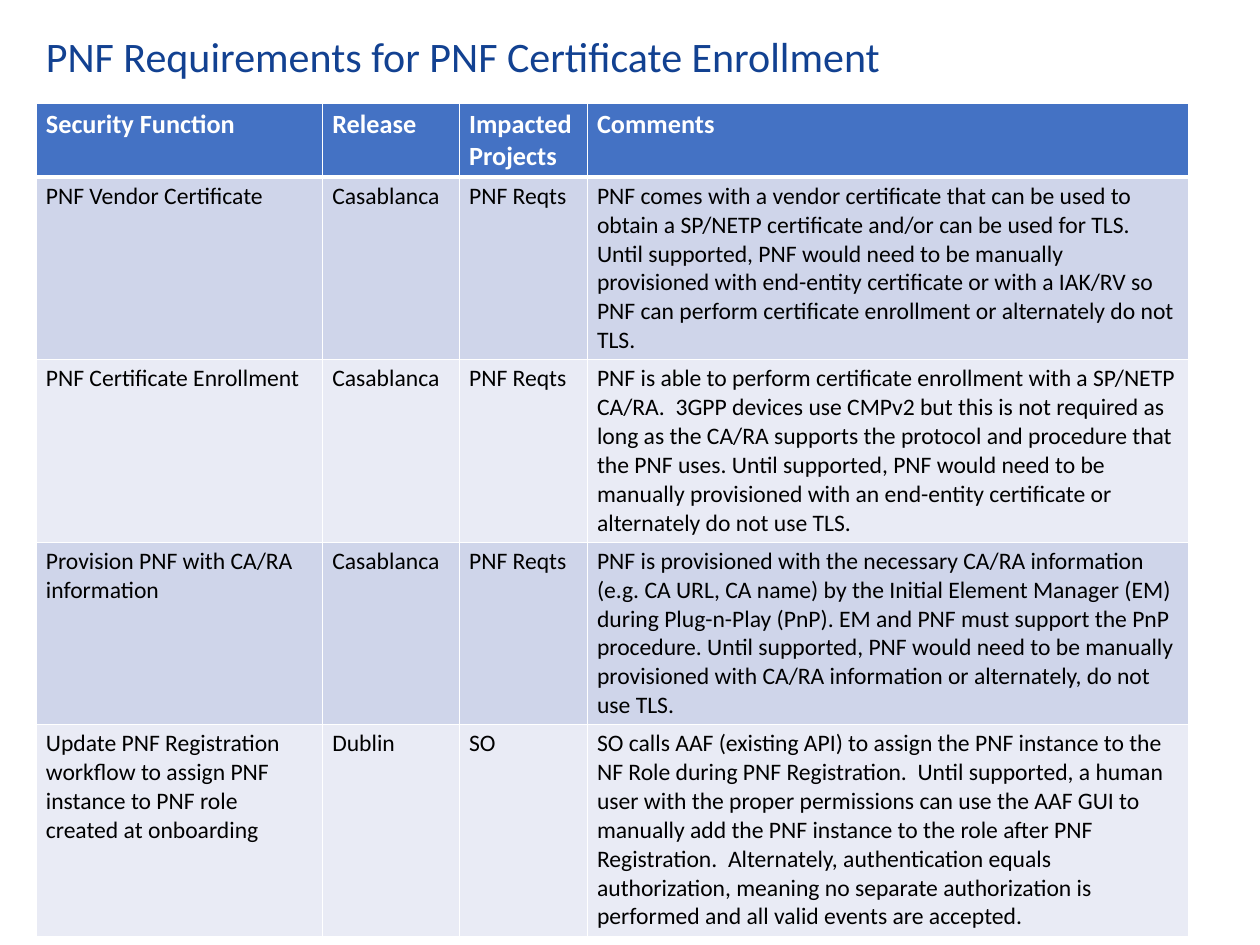
from pptx import Presentation
from pptx.dml.color import RGBColor
from pptx.enum.text import MSO_ANCHOR, MSO_AUTO_SIZE, PP_ALIGN
from pptx.oxml import parse_xml
from pptx.oxml.ns import nsdecls
from pptx.util import Pt

PX = 9525  # EMU per px, 96 px to the inch
FONT = "Calibri"
COLORS = {
    "title": "124191",
    "header": "4472C4",
    "odd": "CFD5EA",
    "even": "E9EBF5",
    "white": "FFFFFF",
    "black": "000000",
}
HEADINGS = ("Security Function", "Release", "Impacted Projects", "Comments")
REQUIREMENTS = (
    ("PNF Vendor Certificate", "Casablanca", "PNF Reqts",
     "PNF comes with a vendor certificate that can be used to obtain a SP/NETP "
     "certificate and/or can be used for TLS.  Until supported, PNF would need to be "
     "manually provisioned with end-entity certificate or with a IAK/RV so PNF can "
     "perform certificate enrollment or alternately do not TLS."),
    ("PNF Certificate Enrollment", "Casablanca", "PNF Reqts",
     "PNF is able to perform certificate enrollment with a SP/NETP CA/RA.  3GPP devices "
     "use CMPv2 but this is not required as long as the CA/RA supports the protocol and "
     "procedure that the PNF uses. Until supported, PNF would need to be manually "
     "provisioned with an end-entity certificate or alternately do not use TLS."),
    ("Provision PNF with CA/RA information", "Casablanca", "PNF Reqts",
     "PNF is provisioned with the necessary CA/RA information (e.g. CA URL, CA name) by "
     "the Initial Element Manager (EM) during Plug-n-Play (PnP). EM and PNF must support "
     "the PnP procedure. Until supported, PNF would need to be manually provisioned with "
     "CA/RA information or alternately, do not use TLS."),
    ("Update PNF Registration workflow to assign PNF instance to PNF role created at "
     "onboarding", "Dublin", "SO",
     "SO calls AAF (existing API) to assign the PNF instance to the NF Role during PNF "
     "Registration.  Until supported, a human user with the proper permissions can use "
     "the AAF GUI to manually add the PNF instance to the role after PNF Registration.  "
     "Alternately, authentication equals authorization, meaning no separate "
     "authorization is performed and all valid events are accepted."),
)
COLUMN_WIDTHS = (291, 139, 130, 611)
ROW_HEIGHTS = (75, 185, 185, 185, 215)


def rgb(name):
    return RGBColor.from_string(COLORS[name])


def set_attributes(target, values):
    for key, value in values.items():
        setattr(target, key, value)


def format_font(font, size, color, bold=False):
    set_attributes(font, {"name": FONT, "size": Pt(size), "bold": bold})
    font.color.rgb = rgb(color)


def add_title(slide, box, text):
    title = slide.shapes.title
    left, top, width, height = (px * PX for px in box)
    set_attributes(title, {"left": left, "top": top, "width": width, "height": height})
    frame = title.text_frame
    set_attributes(frame, {"text": text, "word_wrap": True,
                           "auto_size": MSO_AUTO_SIZE.NONE,
                           "vertical_anchor": MSO_ANCHOR.TOP})
    paragraph = frame.paragraphs[0]
    set_attributes(paragraph, {"alignment": PP_ALIGN.LEFT, "line_spacing": 0.9,
                               "space_before": Pt(0)})
    format_font(paragraph.runs[0].font, 32, "title")


def add_borders(cell, points):
    """Draw white borders; points maps each side (L, R, T, B) to a width."""
    properties = cell._tc.get_or_add_tcPr()
    for side in "LRTB":
        properties.append(parse_xml(
            f'<a:ln{side} {nsdecls("a")} w="{Pt(points[side])}"><a:solidFill>'
            f'<a:srgbClr val="{COLORS["white"]}"/></a:solidFill></a:ln{side}>'))


def fill_cell(cell, text, row_index):
    is_header = row_index == 0
    add_borders(cell, {"L": 1, "R": 1, "T": 3 if row_index == 1 else 1,
                       "B": 3 if is_header else 1})
    band = "header" if is_header else "odd" if row_index % 2 else "even"
    cell.fill.solid()
    cell.fill.fore_color.rgb = rgb(band)
    cell.text = text
    font = cell.text_frame.paragraphs[0].runs[0].font
    if is_header:
        format_font(font, 20, "white", bold=True)
    else:
        format_font(font, 18, "black")


def add_requirements(slide, left, top):
    rows = (HEADINGS, *REQUIREMENTS)
    table = slide.shapes.add_table(
        len(rows), len(HEADINGS), left * PX, top * PX,
        sum(COLUMN_WIDTHS) * PX, sum(ROW_HEIGHTS) * PX).table
    for column, width in zip(table.columns, COLUMN_WIDTHS):
        column.width = width * PX
    for row, height in zip(table.rows, ROW_HEIGHTS):
        row.height = height * PX
    for row_index, texts in enumerate(rows):
        for column_index, text in enumerate(texts):
            fill_cell(table.cell(row_index, column_index), text, row_index)


def main():
    deck = Presentation()
    set_attributes(deck, {"slide_width": 1280 * PX, "slide_height": 960 * PX})
    slide = deck.slides.add_slide(deck.slide_layouts.get_by_name("Title Only"))
    add_title(slide, (37, 32, 1132, 73),
              "PNF Requirements for PNF Certificate Enrollment")
    add_requirements(slide, 37, 105)
    deck.save("out.pptx")


if __name__ == "__main__":
    main()
